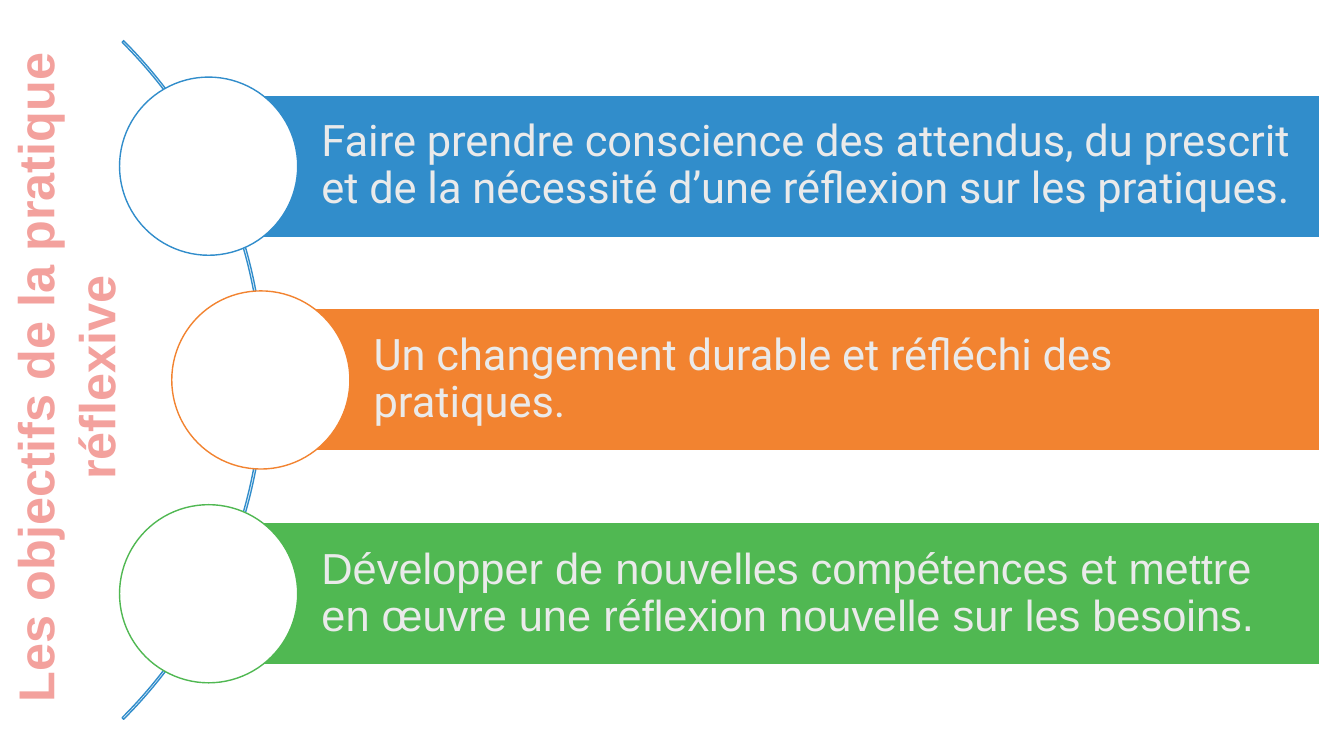
import pptx
import pptx.util
import pptx.dml.color
import pptx.enum.shapes
import pptx.enum.text

Pt = pptx.util.Pt
SHAPE = pptx.enum.shapes.MSO_SHAPE
ANCHOR = pptx.enum.text.MSO_ANCHOR
ALIGN = pptx.enum.text.PP_ALIGN

COLORS = {
    "title": "F3A19D",
    "text": "EAEAEA",
    "white": "FFFFFF",
    "blue": "318DCB",
    "orange": "F28330",
    "green": "50B852",
}

# Text, font, colour and left edge of each bar
OBJECTIVES = [
    ("Faire prendre conscience des attendus, du prescrit et de la nécessité "
     "d’une réflexion sur les pratiques.", "Roboto", "blue", 149),
    ("Un changement durable et réfléchi des pratiques.", "Roboto", "orange", 186.3),
    ("Développer de nouvelles compétences et mettre en œuvre une réflexion "
     "nouvelle sur les besoins.", "Arial", "green", 149),
]


def rgb(name):
    return pptx.dml.color.RGBColor.from_string(COLORS[name])


def apply(obj, values):
    for name, value in values.items():
        setattr(obj, name, value)


def add_shape(s, kind, box, fill, line):
    sp = s.shapes.add_shape(kind, *[Pt(v) for v in box])
    sp.shadow.inherit = False
    if fill:
        sp.fill.solid()
        sp.fill.fore_color.rgb = rgb(fill)
    else:
        sp.fill.background()
    sp.line.color.rgb = rgb(line)
    sp.line.width = Pt(1)
    return sp


def format_text(sp, text, frame, paragraph, font, color):
    tf = sp.text_frame
    tf.text = text
    apply(tf, {"word_wrap": True, **frame})
    p = tf.paragraphs[0]
    apply(p, paragraph)
    r = p.runs[0]
    apply(r.font, font)
    r.font.color.rgb = rgb(color)


def add_title(s, box):
    # Vertical title, centred on the box and turned to read upwards
    x, y, w, h = box
    sp = s.shapes.title
    apply(sp, {"left": Pt(x + (w - h) / 2), "top": Pt(y + (h - w) / 2),
               "width": Pt(h), "height": Pt(w), "rotation": 270})
    format_text(
        sp, "Les objectifs de la pratique réflexive",
        {"vertical_anchor": ANCHOR.TOP, "auto_size": pptx.enum.text.MSO_AUTO_SIZE.NONE,
         "margin_top": Pt(3.6), "margin_bottom": Pt(3.6)},
        {"alignment": ALIGN.CENTER, "line_spacing": Pt(43.5)},
        {"size": Pt(36), "bold": True, "name": "Arial"}, "title")


def add_objective(s, box, text, font, color):
    # Bar with its text, and a circle centred on the bar's left edge
    x, y, w, h = box
    bar = add_shape(s, SHAPE.RECTANGLE, box, color, "white")
    format_text(
        bar, text,
        {"vertical_anchor": ANCHOR.MIDDLE, "margin_left": Pt(80.6),
         "margin_right": Pt(6.2), "margin_top": Pt(6.2), "margin_bottom": Pt(6.2)},
        {"alignment": ALIGN.LEFT, "line_spacing": 0.9},
        {"size": Pt(31), "name": font}, "text")
    d = 1.25 * h
    add_shape(s, SHAPE.OVAL, (x - d / 2, y + h / 2 - d / 2, d, d), "white", color)


def add_objectives(s, box):
    x, y, w, h = box
    bar_h, pitch = 101.8, 152.7
    # Thin arc running behind the circles, centred on the middle bar
    d = 685.5
    arc = add_shape(s, SHAPE.BLOCK_ARC, (x - d, y + h / 2 - d / 2, d, d), None, "blue")
    for i, value in enumerate((189, 27, 0.0023)):
        arc.adjustments[i] = value
    # Evenly spaced bars
    first = y + h / 2 - pitch - bar_h / 2
    for i, (text, font, color, left) in enumerate(OBJECTIVES):
        add_objective(s, (left, first + i * pitch, x + w - left, bar_h),
                      text, font, color)


def main():
    prs = pptx.Presentation()
    prs.slide_width, prs.slide_height = Pt(960), Pt(540)
    s = prs.slides.add_slide(prs.slide_layouts[5])
    add_title(s, (-1, 0, 94.3, 539.3))
    add_objectives(s, (188.7, 29, 753.8, 484.8))
    prs.save("out.pptx")


if __name__ == "__main__":
    main()
